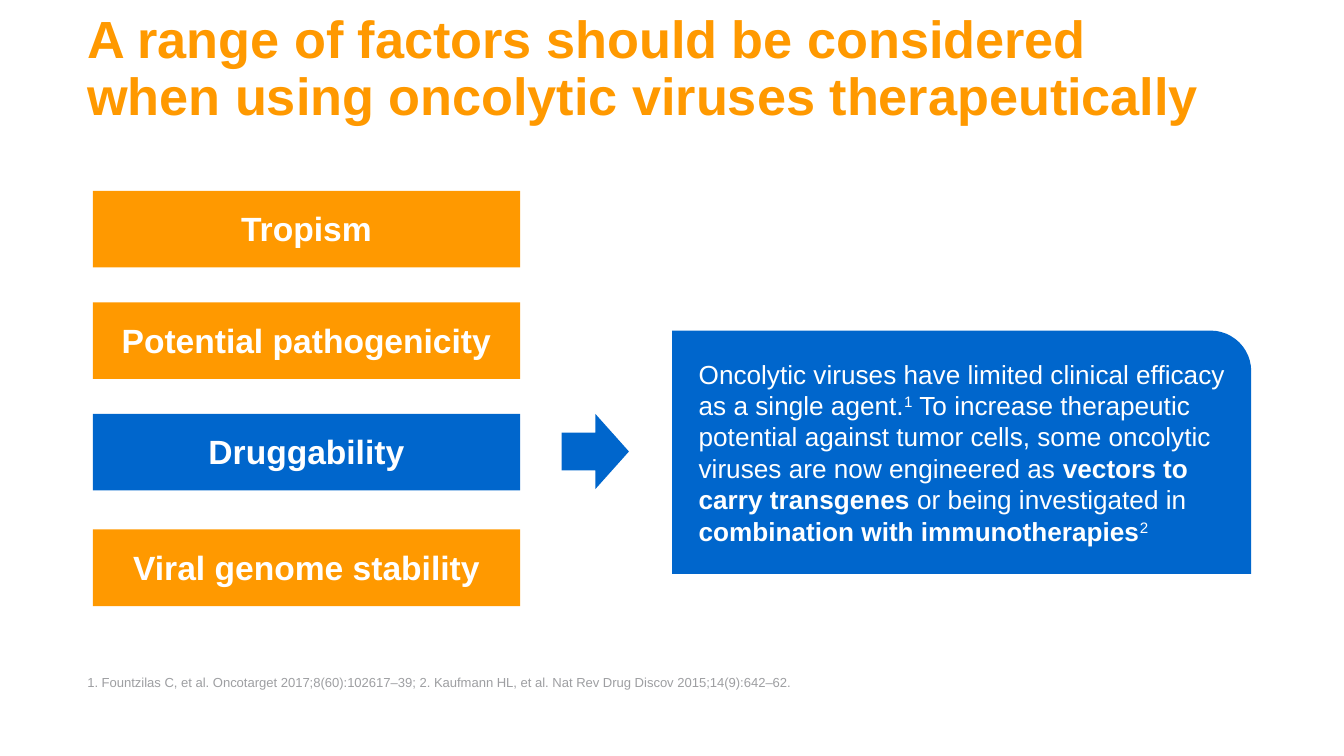
from dataclasses import dataclass

from pptx import Presentation
from pptx.dml.color import RGBColor
from pptx.enum.shapes import MSO_SHAPE
from pptx.enum.text import MSO_ANCHOR, PP_ALIGN
from pptx.util import Inches, Pt

RECT = MSO_SHAPE.RECTANGLE
CALLOUT = MSO_SHAPE.ROUND_1_RECTANGLE
ARROW = MSO_SHAPE.RIGHT_ARROW
TOP, MIDDLE, BOTTOM = MSO_ANCHOR.TOP, MSO_ANCHOR.MIDDLE, MSO_ANCHOR.BOTTOM
LEFT, CENTER = PP_ALIGN.LEFT, PP_ALIGN.CENTER

WIDTH = Inches(10)
HEIGHT = WIDTH * 9 // 16
COLS = 1000
UNIT = WIDTH // COLS


@dataclass(frozen=True)
class Theme:
    font: str = "Arial"
    orange: str = "FF9900"
    blue: str = "0066CC"
    white: str = "FFFFFF"
    gray: str = "9E9FA2"
    title: int = 28
    label: int = 18
    body: int = 14
    note: int = 7


THEME = Theme()

TITLE = "A range of factors should be considered when using oncolytic viruses therapeutically"
REFERENCES = (
    "1. Fountzilas C, et al. Oncotarget 2017;8(60):102617–39; "
    "2. Kaufmann HL, et al. Nat Rev Drug Discov 2015;14(9):642–62."
)
FACTORS = [
    ("Tropism", 0, THEME.orange),
    ("Potential pathogenicity", 83, THEME.orange),
    ("Druggability", 166, THEME.blue),
    ("Viral genome stability", 252, THEME.orange),
]
FINDINGS = [
    ("Oncolytic viruses have limited clinical efficacy as a single agent.", ""),
    ("1", "super"),
    (" To increase therapeutic potential against tumor cells, "
     "some oncolytic viruses are now engineered as ", ""),
    ("vectors to carry transgenes", "bold"),
    (" or being investigated in ", ""),
    ("combination with immunotherapies", "bold"),
    ("2", "super"),
]


def place(box):
    return [UNIT * cells for cells in box]


def write(sp, runs, size, color, bold=False, align=LEFT, anchor=TOP,
          margins=(0, 0), spacing=None, after=0, indent=0):
    tf = sp.text_frame
    tf.word_wrap = True
    tf.vertical_anchor = anchor
    tf.margin_left = tf.margin_right = Inches(margins[0])
    tf.margin_top = tf.margin_bottom = Inches(margins[1])
    p = tf.paragraphs[0]
    p.alignment = align
    p.space_after = Pt(after)
    if spacing:
        p.line_spacing = spacing
    if indent:
        p_pr = p._p.get_or_add_pPr()
        p_pr.set("marL", str(Inches(indent)))
        p_pr.set("indent", "0")
    for text, style in [(runs, "")] if isinstance(runs, str) else runs:
        r = p.add_run()
        r.text = text
        r.font.name = THEME.font
        r.font.size = Pt(size)
        r.font.bold = bold or style == "bold"
        r.font.color.rgb = RGBColor.from_string(color)
        if style == "super":
            r._r.get_or_add_rPr().set("baseline", "30000")


def add_block(s, kind, box, color):
    sp = s.shapes.add_shape(kind, *place(box))
    sp.shadow.inherit = False
    sp.fill.solid()
    sp.fill.fore_color.rgb = RGBColor.from_string(color)
    sp.line.fill.background()
    return sp


def add_heading(s, box):
    write(s.shapes.add_textbox(*place(box)), TITLE, THEME.title, THEME.orange,
          bold=True, anchor=BOTTOM, spacing=0.9)


def add_references(s, box):
    write(s.shapes.add_textbox(*place(box)), REFERENCES, THEME.note, THEME.gray,
          anchor=BOTTOM, spacing=0.9, after=2)


def add_factors(s, box, row_height=57):
    x, y, w, _ = box
    for label, offset, color in FACTORS:
        sp = add_block(s, RECT, (x, y + offset, w, row_height), color)
        write(sp, label, THEME.label, THEME.white, bold=True, align=CENTER,
              margins=(0.05, 0.13))


def add_findings(s, box):
    sp = add_block(s, CALLOUT, box, THEME.blue)
    write(sp, FINDINGS, THEME.body, THEME.white, anchor=MIDDLE,
          margins=(0.1, 0.2), indent=0.1)


def main():
    prs = Presentation()
    prs.slide_width, prs.slide_height = WIDTH, HEIGHT
    s = prs.slides.add_slide(prs.slide_layouts[6])
    add_heading(s, (65, 30, 847, 64))
    add_references(s, (65, 481, 847, 33))
    add_block(s, ARROW, (418, 308, 50, 56), THEME.blue)
    add_findings(s, (500, 246, 431, 181))
    add_factors(s, (69, 142, 318, 309))
    prs.save("out.pptx")


if __name__ == "__main__":
    main()
